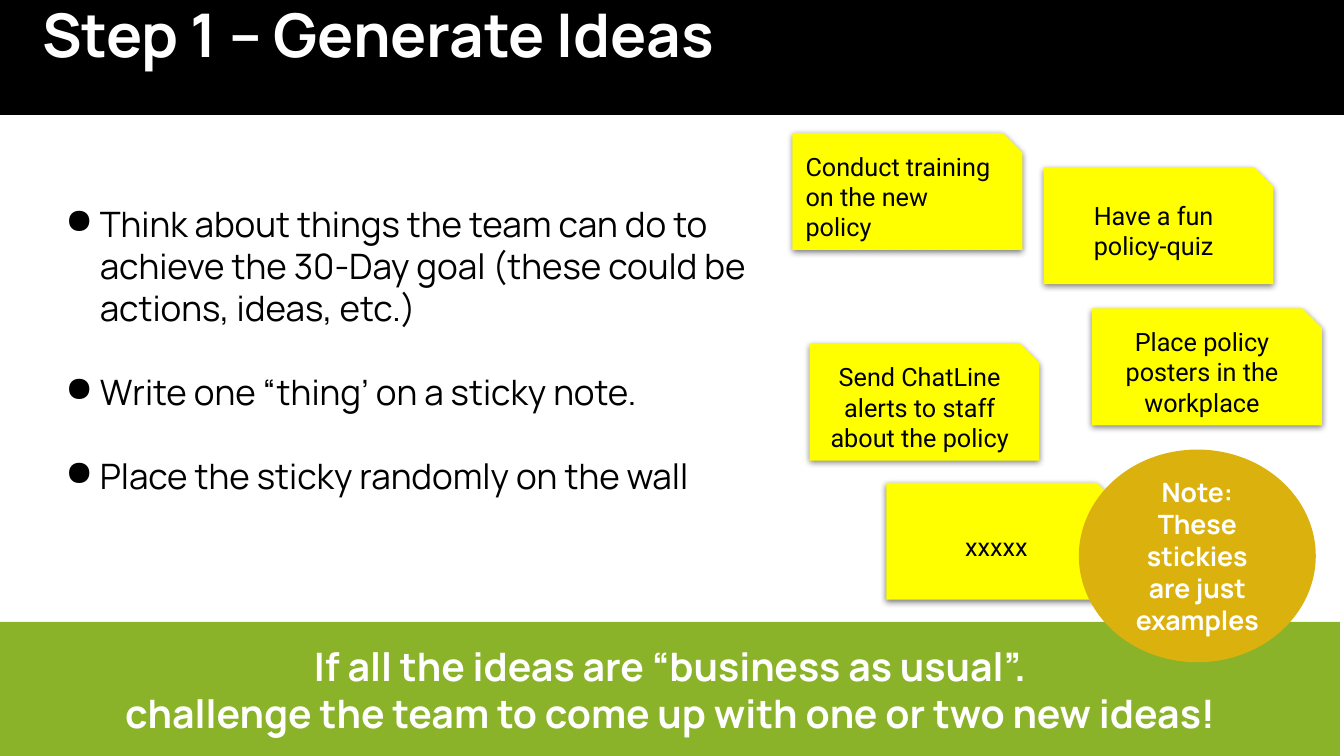
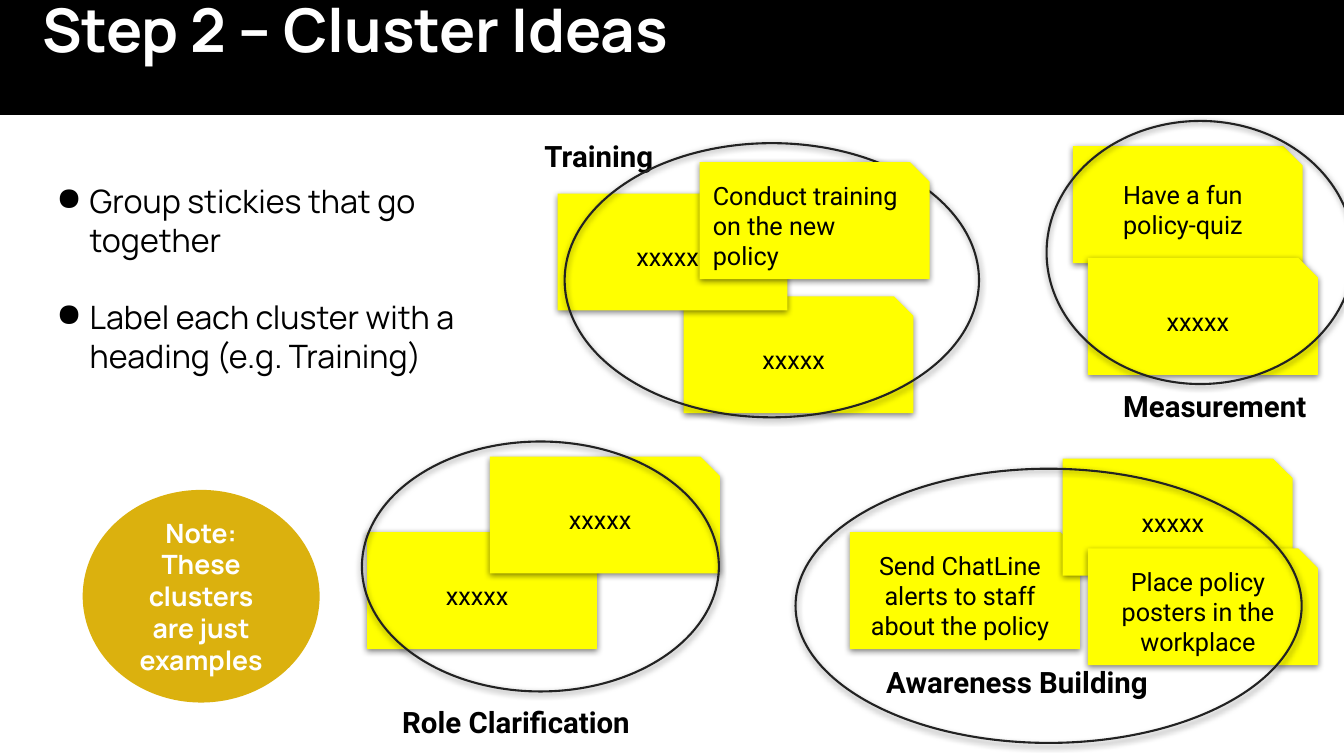
from lxml import etree
from pptx import Presentation
from pptx.dml.color import RGBColor
from pptx.enum.shapes import MSO_SHAPE as Shape
from pptx.enum.text import MSO_ANCHOR as Anchor, MSO_AUTO_SIZE as AutoSize, PP_ALIGN as Align
from pptx.oxml.ns import qn
from pptx.util import Inches, Pt

COLORS = {
    "black": "000000",
    "white": "FFFFFF",
    "sticky": "FFFF00",
    "banner": "8BB32A",
    "remark": "DBB10E",
    "ring": "222222",
}
HEADING_FONT = "Manrope"
NOTE_FONT = "Roboto"
NOTE_SIZE = (2.28, 1.16)
REMARK_SIZE = (2.35, 2.11)
LINE_FACTOR = 1.2

TRAINING = "Conduct training on the new policy"
QUIZ = "Have a fun policy-quiz"
ALERTS = "Send ChatLine alerts to staff about the policy"
POSTERS = "Place policy posters in the workplace"
BLANK = "xxxxx"


def rgb(name):
    return RGBColor.from_string(COLORS[name])


def set_text(shape, lines, size, font, color, bold=False, align=Align.LEFT,
             anchor=Anchor.TOP, inset=0.13):
    frame = shape.text_frame
    frame.text = "\n".join(lines)
    frame.word_wrap = True
    frame.auto_size = AutoSize.NONE
    frame.vertical_anchor = anchor
    frame.margin_left = frame.margin_right = Inches(inset)
    frame.margin_top = frame.margin_bottom = Inches(inset)
    for paragraph in frame.paragraphs:
        paragraph.alignment = align
        for run in paragraph.runs:
            run.font.size = Pt(size)
            run.font.name = font
            run.font.bold = bold
            run.font.color.rgb = rgb(color)
    return frame


def add_soft_shadow(shape):
    effects = shape._element.spPr.find(qn("a:effectLst"))
    shadow = etree.SubElement(effects, qn("a:outerShdw"), blurRad=str(Pt(4.5)),
                              dist=str(Pt(1.5)), dir="5400000", rotWithShape="0")
    tint = etree.SubElement(shadow, qn("a:srgbClr"), val=COLORS["black"])
    etree.SubElement(tint, qn("a:alpha"), val="50000")


def add_shape(slide, preset, box, fill=None, line=None, shadow=False):
    shape = slide.shapes.add_shape(preset, *map(Inches, box))
    shape.shadow.inherit = False
    if fill:
        shape.fill.solid()
        shape.fill.fore_color.rgb = rgb(fill)
    else:
        shape.fill.background()
    if line:
        shape.line.color.rgb = rgb(line)
        shape.line.width = Pt(1.5)
    else:
        shape.line.fill.background()
    if shadow:
        add_soft_shadow(shape)
    return shape


def add_titled_slide(deck, title, title_top):
    slide = deck.slides.add_slide(deck.slide_layouts[5])
    band = add_shape(slide, Shape.RECTANGLE, (0, 0, 13.33, 1.14), "black")
    slide.shapes._spTree.insert(2, band._element)
    heading = slide.shapes.title
    heading.left, heading.top = Inches(0.32), Inches(title_top)
    heading.width, heading.height = Inches(10.22), Inches(0.99)
    frame = set_text(heading, [title], 43, HEADING_FONT, "white", bold=True, inset=0.1)
    frame.paragraphs[0].line_spacing = 0.8
    return slide


def add_bullets(slide, box, lines, size, margin, hanging):
    """Add a bulleted list with one line's height between its items."""
    area = slide.shapes.add_textbox(*map(Inches, box))
    frame = set_text(area, lines, size, HEADING_FONT, "black")
    for index, paragraph in enumerate(frame.paragraphs):
        properties = paragraph._p.get_or_add_pPr()
        properties.set("marL", str(Inches(margin)))
        properties.set("indent", str(-Inches(hanging)))
        bullet_color = etree.SubElement(properties, qn("a:buClr"))
        etree.SubElement(bullet_color, qn("a:srgbClr"), val=COLORS["black"])
        etree.SubElement(properties, qn("a:buChar"), char="●")
        if index:
            paragraph.space_before = Pt(size * LINE_FACTOR)


def add_sticky(slide, left, top, text=BLANK, align=Align.CENTER):
    sticky = add_shape(slide, Shape.SNIP_1_RECTANGLE, (left, top, *NOTE_SIZE),
                       "sticky", shadow=True)
    set_text(sticky, [text], 18, NOTE_FONT, "black", align=align, anchor=Anchor.MIDDLE)


def add_remark(slide, left, top, text):
    remark = add_shape(slide, Shape.OVAL, (left, top, *REMARK_SIZE), "remark")
    set_text(remark, [text], 19, HEADING_FONT, "white", bold=True,
             align=Align.CENTER, anchor=Anchor.MIDDLE)


def add_banner(slide, lines):
    banner = add_shape(slide, Shape.RECTANGLE, (0, 6.17, 13.29, 1.33), "banner")
    set_text(banner, lines, 28, HEADING_FONT, "white", bold=True,
             align=Align.CENTER, anchor=Anchor.MIDDLE)


def add_cluster_label(slide, left, top, width, text):
    label = slide.shapes.add_textbox(*map(Inches, (left, top, width, 0.42)))
    set_text(label, [text], 21, NOTE_FONT, "black", bold=True)


def add_cluster_ring(slide, *box):
    add_shape(slide, Shape.OVAL, box, line="ring", shadow=True)


def build_generate_slide(deck):
    slide = add_titled_slide(deck, "Step 1 – Generate Ideas", 0.01)
    add_bullets(slide, (0.07, 1.88, 7.57, 3.2), [
        "Think about things the team can do to achieve the 30-Day goal "
        "(these could be actions, ideas, etc.)",
        "Write one “thing’ on a sticky note.",
        "Place the sticky randomly on the wall",
    ], size=25, margin=0.79, hanging=0.34)
    add_sticky(slide, 8.79, 4.79)
    add_sticky(slide, 7.86, 1.32, TRAINING, Align.LEFT)
    add_sticky(slide, 8.03, 3.41, ALERTS)
    add_sticky(slide, 10.35, 1.66, QUIZ)
    add_sticky(slide, 10.83, 3.06, POSTERS)
    add_banner(slide, [
        "If all the ideas are “business as usual”.",
        "challenge the team to come up with one or two new ideas!",
    ])
    add_remark(slide, 10.7, 4.46, "Note: These stickies are just examples")


def build_cluster_slide(deck):
    slide = add_titled_slide(deck, "Step 2 – Cluster Ideas", -0.04)
    add_bullets(slide, (0, 1.67, 4.84, 2.22), [
        "Group stickies that go together",
        "Label each cluster with a heading (e.g. Training)",
    ], size=23, margin=0.76, hanging=0.33)
    for label in (
        (5.27, 1.24, 1.45, "Training"),
        (3.86, 6.86, 3.4, "Role Clarification"),
        (8.66, 6.46, 3.38, "Awareness Building"),
        (11.01, 3.72, 2.16, "Measurement"),
    ):
        add_cluster_label(slide, *label)
    add_sticky(slide, 8.43, 5.28, ALERTS)
    add_sticky(slide, 10.64, 1.45, QUIZ)
    for left, top in ((6.78, 2.94), (5.53, 1.92), (10.79, 2.56),
                      (10.54, 4.55), (3.64, 5.28), (4.86, 4.53)):
        add_sticky(slide, left, top)
    add_remark(slide, 0.82, 4.86, "Note: These clusters are just examples")
    add_cluster_ring(slide, 3.59, 4.38, 3.54, 2.48)
    add_cluster_ring(slide, 5.6, 1.42, 4.11, 2.72)
    add_sticky(slide, 6.94, 1.61, TRAINING, Align.LEFT)
    add_cluster_ring(slide, 10.38, 1.2, 3.05, 2.61)
    add_sticky(slide, 10.79, 5.44, POSTERS)
    add_cluster_ring(slide, 7.89, 4.65, 5.02, 2.72)


def main():
    deck = Presentation()
    deck.slide_width, deck.slide_height = Inches(13.33), Inches(7.5)
    build_generate_slide(deck)
    build_cluster_slide(deck)
    deck.save("out.pptx")


if __name__ == "__main__":
    main()
